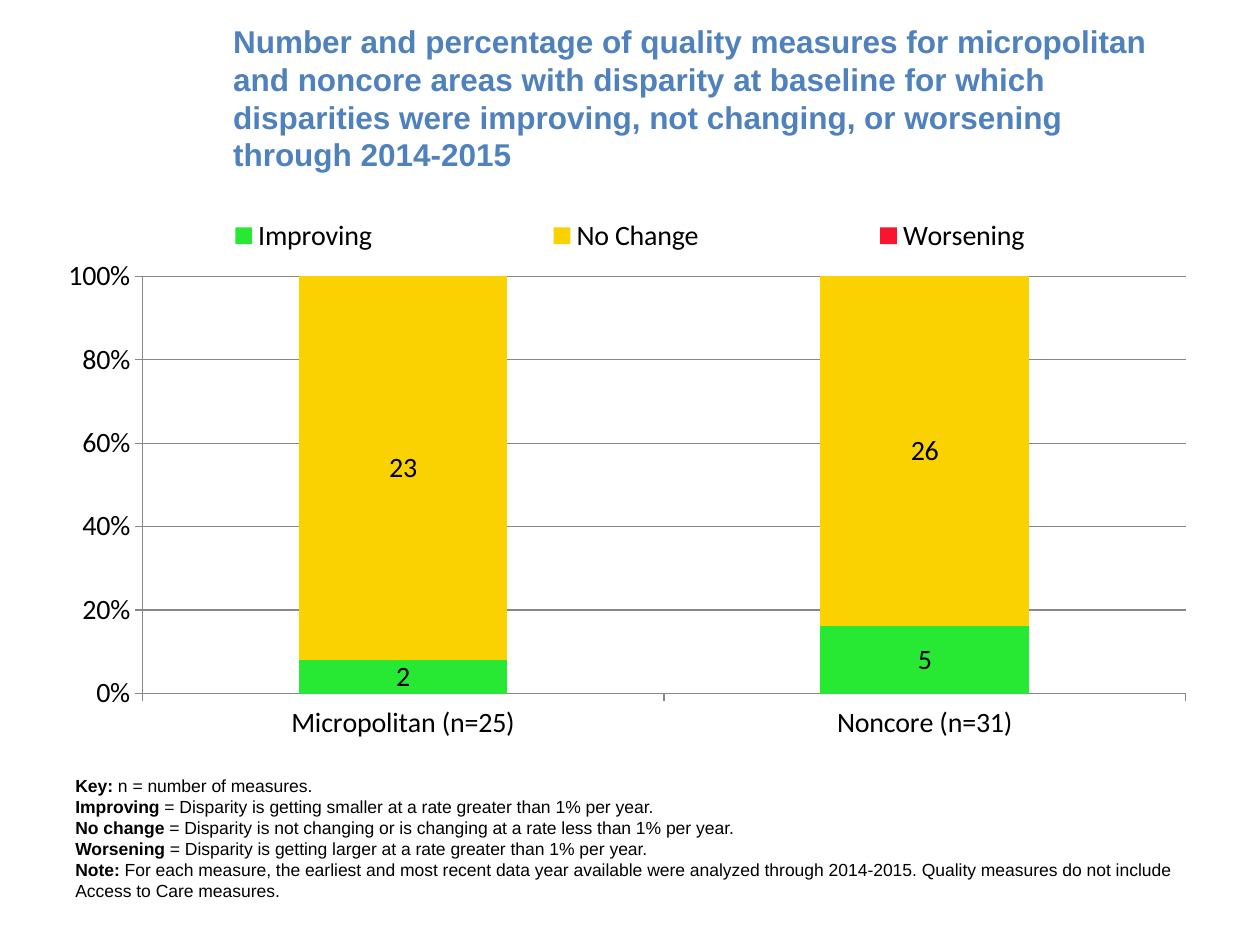
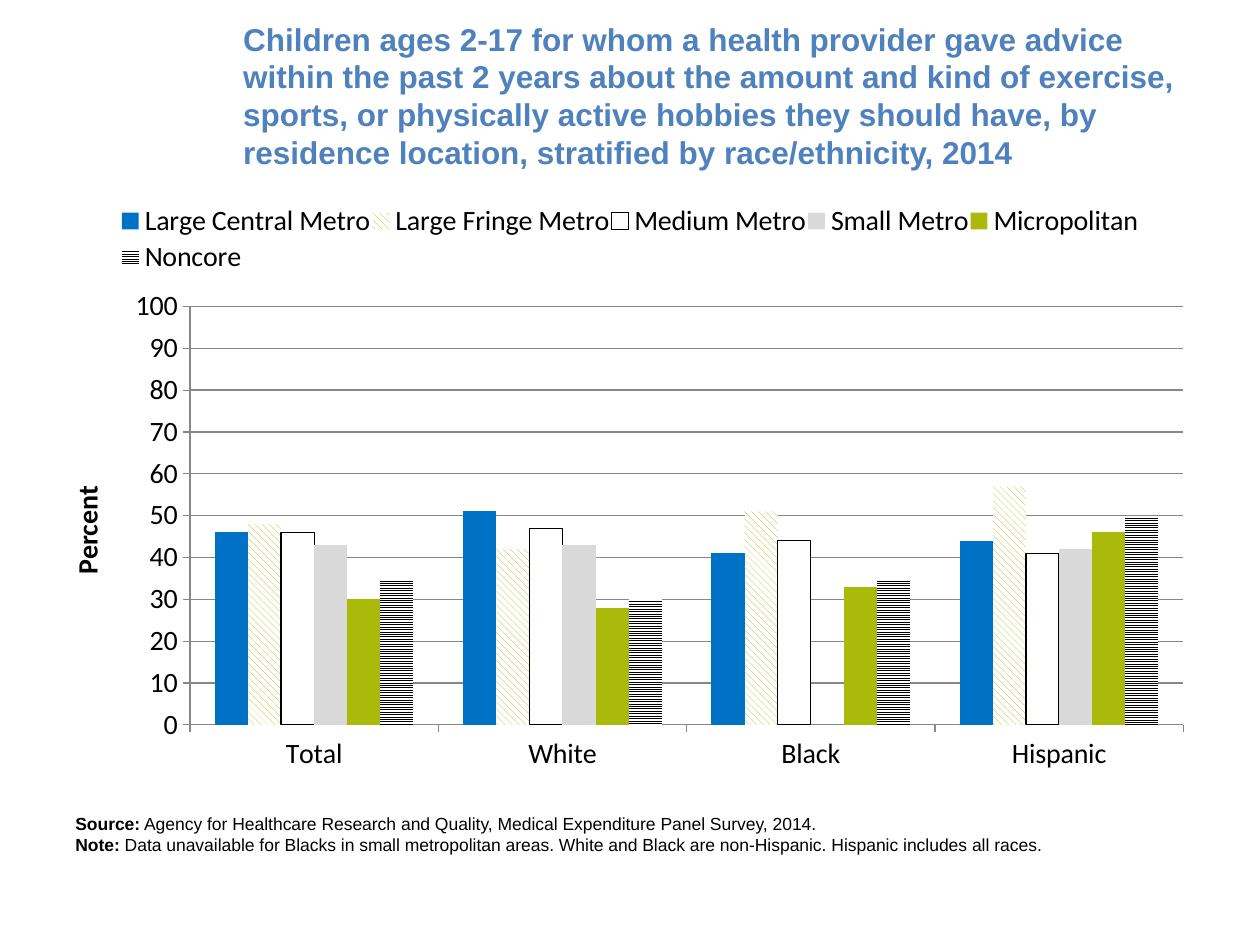
"""Builds two chart slides on health care quality by residence location."""
import pptx
import pptx.chart.data
import pptx.dml.color
import pptx.enum.chart
import pptx.enum.dml
import pptx.enum.text
import pptx.oxml
import pptx.oxml.ns
import pptx.util

Inches, Pt = pptx.util.Inches, pptx.util.Pt
RGBColor = pptx.dml.color.RGBColor
PATTERN = pptx.enum.dml.MSO_PATTERN
CHART_TYPE = pptx.enum.chart.XL_CHART_TYPE
qn = pptx.oxml.ns.qn

TITLE_BLUE = RGBColor(0x4F, 0x81, 0xBD)
BLACK = RGBColor(0, 0, 0)
WHITE = RGBColor(0xFF, 0xFF, 0xFF)
GREEN = RGBColor(0x27, 0xE8, 0x33)
YELLOW = RGBColor(0xFA, 0xD2, 0x01)
RED = RGBColor(0xF9, 0x15, 0x2F)
BLUE = RGBColor(0x00, 0x72, 0xC6)
OLIVE = RGBColor(0xAA, 0xBA, 0x0A)
GRAY = RGBColor(0xD9, 0xD9, 0xD9)
TEXT_FONT, CHART_FONT = "Arial", "Calibri"
LEFT, WIDTH = 0.5, 9

SLIDES = [
    {
        "title": "Number and percentage of quality measures for micropolitan and noncore "
                 "areas with disparity at baseline for which disparities were improving, "
                 "not changing, or worsening through 2014-2015",
        "title_at": (1.75, 0.3, 7.75, 0.95),
        "type": CHART_TYPE.COLUMN_STACKED_100,
        "chart_at": (LEFT, 1.7, WIDTH, 4.3),
        "plot": (0.07, 0.115, 0.92, 0.77),
        "legend": (0, 0, 1, 0.08),
        "axis": {"format": "0%", "step": 0.2},
        "categories": ["Micropolitan (n=25)", "Noncore (n=31)"],
        "series": [
            {"name": "Improving", "values": [2, 5], "fill": GREEN, "labels": True},
            {"name": "No Change", "values": [23, 26], "fill": YELLOW, "labels": True},
            {"name": "Worsening", "values": [0, 0], "fill": RED},
        ],
        "notes_at": (LEFT, 6.1, WIDTH, 1.11),
        "notes": [
            ("Key:", " n = number of measures."),
            ("Improving", " = Disparity is getting smaller at a rate greater than 1% per year."),
            ("No change", " = Disparity is not changing or is changing at a rate less than "
                          "1% per year."),
            ("Worsening", " = Disparity is getting larger at a rate greater than 1% per year."),
            ("Note:", " For each measure, the earliest and most recent data year available were "
                      "analyzed through 2014-2015. Quality measures do not include Access to "
                      "Care measures."),
        ],
    },
    {
        "title": "Children ages 2-17 for whom a health provider gave advice within the past "
                 "2 years about the amount and kind of exercise, sports, or physically active "
                 "hobbies they should have, by residence location, stratified by "
                 "race/ethnicity, 2014",
        "title_at": (1.83, 0.17, 7.75, 1.17),
        "type": CHART_TYPE.COLUMN_CLUSTERED,
        "chart_at": (LEFT, 1.6, WIDTH, 4.6),
        "plot": (0.112, 0.181, 0.876, 0.722),
        "legend": (0.05, 0, 0.9, 0.13),
        "axis": {"format": "0", "step": 10, "range": (0, 100), "title": "Percent"},
        "categories": ["Total", "White", "Black", "Hispanic"],
        "series": [
            {"name": "Large Central Metro", "values": [46, 51, 41, 44], "fill": BLUE},
            {"name": "Large Fringe Metro", "values": [48, 42, 51, 57], "fill": OLIVE,
             "pattern": PATTERN.WIDE_DOWNWARD_DIAGONAL},
            {"name": "Medium Metro", "values": [46, 47, 44, 41], "fill": WHITE, "line": BLACK},
            {"name": "Small Metro", "values": [43, 43, None, 42], "fill": GRAY},
            {"name": "Micropolitan", "values": [30, 28, 33, 46], "fill": OLIVE},
            {"name": "Noncore", "values": [35, 30, 35, 50], "fill": BLACK,
             "pattern": PATTERN.LIGHT_HORIZONTAL},
        ],
        "notes_at": (LEFT, 6.4, WIDTH, 0.44),
        "notes": [
            ("Source:", " Agency for Healthcare Research and Quality, Medical Expenditure "
                        "Panel Survey, 2014."),
            ("Note:", " Data unavailable for Blacks in small metropolitan areas. White and "
                      "Black are non-Hispanic. Hispanic includes all races."),
        ],
    },
]


def style_font(font, size=16, name=CHART_FONT, color=BLACK, bold=False):
    font.size, font.name, font.bold = Pt(size), name, bold
    font.color.rgb = color


def add_run(p, text, **style):
    r = p.add_run()
    r.text = text
    style_font(r.font, **style)


def set_layout(parent, index, box, inner=False):
    for old in parent.findall(qn("c:layout")):
        parent.remove(old)
    target = '<c:layoutTarget val="inner"/>' if inner else ""
    modes = "".join(f'<c:{k}Mode val="edge"/>' for k in "xy")
    sizes = "".join(f'<c:{k} val="{v}"/>' for k, v in zip("xywh", box))
    parent.insert(index, pptx.oxml.parse_xml(
        f'<c:layout {pptx.oxml.ns.nsdecls("c")}><c:manualLayout>'
        f'{target}{modes}{sizes}</c:manualLayout></c:layout>'))


def add_title(s, text, at):
    sp = s.shapes.title
    sp.left, sp.top, sp.width, sp.height = map(Inches, at)
    tf = sp.text_frame
    tf.word_wrap = True
    tf.auto_size = pptx.enum.text.MSO_AUTO_SIZE.NONE
    tf.vertical_anchor = pptx.enum.text.MSO_ANCHOR.MIDDLE
    p = tf.paragraphs[0]
    p.alignment = pptx.enum.text.PP_ALIGN.LEFT
    add_run(p, text, size=18, name=TEXT_FONT, color=TITLE_BLUE, bold=True)


def add_notes_box(s, notes, at):
    tf = s.shapes.add_textbox(*map(Inches, at)).text_frame
    tf.word_wrap = True
    for i, (term, text) in enumerate(notes):
        p = tf.add_paragraph() if i else tf.paragraphs[0]
        add_run(p, term, size=10, name=TEXT_FONT, bold=True)
        add_run(p, text, size=10, name=TEXT_FONT)


def style_series(series, look):
    fill = series.format.fill
    if "pattern" in look:
        fill.patterned()
        fill.pattern = look["pattern"]
        fill.fore_color.rgb, fill.back_color.rgb = look["fill"], WHITE
    else:
        fill.solid()
        fill.fore_color.rgb = look["fill"]
    if "line" in look:
        series.format.line.color.rgb = look["line"]
        series.format.line.width = Pt(0.75)
    series.invert_if_negative = False
    if look.get("labels"):
        series.data_labels.show_value = True
        style_font(series.data_labels.font)


def style_axes(chart, axis):
    for ax in (chart.category_axis, chart.value_axis):
        ax.major_tick_mark = pptx.enum.chart.XL_TICK_MARK.OUTSIDE
        style_font(ax.tick_labels.font)
    val = chart.value_axis
    val.has_major_gridlines = True
    val.major_unit = axis["step"]
    val.tick_labels.number_format = axis["format"]
    val.tick_labels.number_format_is_linked = False
    if "range" in axis:
        val.minimum_scale, val.maximum_scale = axis["range"]
    if "title" in axis:
        add_run(val.axis_title.text_frame.paragraphs[0], axis["title"], bold=True)


def add_column_chart(s, content):
    data = pptx.chart.data.CategoryChartData()
    data.categories = content["categories"]
    for look in content["series"]:
        data.add_series(look["name"], look["values"])
    chart = s.shapes.add_chart(content["type"], *map(Inches, content["chart_at"]), data).chart
    chart.has_title = False
    style_font(chart.font, size=10, name=TEXT_FONT)
    plot = chart.plots[0]
    plot.gap_width, plot.vary_by_categories = 150, False
    for series, look in zip(plot.series, content["series"]):
        style_series(series, look)
    style_axes(chart, content["axis"])
    chart.has_legend = True
    legend = chart.legend
    legend.position = pptx.enum.chart.XL_LEGEND_POSITION.TOP
    legend.include_in_layout = False
    style_font(legend.font)
    set_layout(legend._element, 1, content["legend"])
    set_layout(chart._chartSpace.chart.plotArea, 0, content["plot"], inner=True)


def main():
    prs = pptx.Presentation()
    prs.slide_width, prs.slide_height = Inches(10), Inches(7.5)
    for content in SLIDES:
        s = prs.slides.add_slide(prs.slide_layouts.get_by_name("Title Only"))
        add_title(s, content["title"], content["title_at"])
        add_column_chart(s, content)
        add_notes_box(s, content["notes"], content["notes_at"])
    prs.save("out.pptx")


if __name__ == "__main__":
    main()
